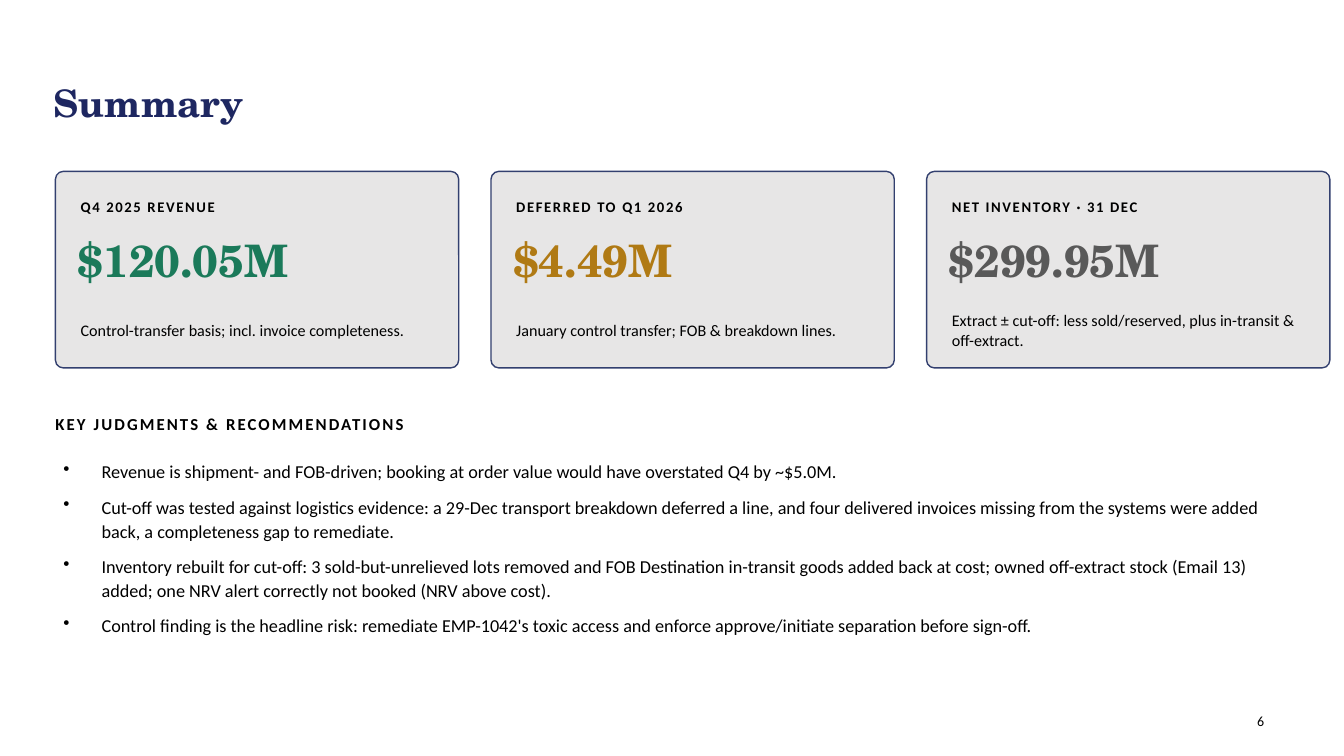
"""Build the summary slide: three headline figures and the key judgments."""
from dataclasses import dataclass

from lxml.etree import SubElement
from pptx import Presentation
from pptx.dml.color import RGBColor as Rgb
from pptx.enum.shapes import MSO_SHAPE as Preset
from pptx.enum.text import MSO_ANCHOR as Anchor, MSO_AUTO_SIZE as AutoSize, PP_ALIGN as Align
from pptx.oxml.ns import qn
from pptx.slide import Slide
from pptx.text.text import TextFrame, _Paragraph as Paragraph
from pptx.util import Emu, Pt

EMU_PER_PX = 9144


@dataclass(frozen=True)
class Style:
    """Font, size, colour, weight and letter spacing of a text."""
    font: str
    size: float
    color: str = "000000"
    bold: bool = False
    spacing: float = 0


@dataclass(frozen=True)
class Theme:
    """Colours and text styles of the slide."""
    card_fill: str = "E7E6E6"
    card_line: str = "33406F"
    revenue: str = "1B7A5A"
    deferred: str = "B07A14"
    inventory: str = "595959"
    title: Style = Style("TeX Gyre Schola", 27, "1E2761", True)
    label: Style = Style("Calibri", 10.5, bold=True, spacing=1.2)
    note: Style = Style("Calibri", 11.5)
    heading: Style = Style("Calibri", 12, bold=True, spacing=1.5)
    body: Style = Style("Calibri", 13)
    page: Style = Style("Calibri", 10)

    def figure(self, color: str) -> Style:
        """Return the headline figure style in the given colour."""
        return Style("TeX Gyre Schola", 32, color, True)


@dataclass(frozen=True)
class Box:
    """Position and size in px."""
    left: int
    top: int
    width: int
    height: int

    def emu(self) -> tuple[Emu, Emu, Emu, Emu]:
        """Return the box in EMU."""
        return px(self.left), px(self.top), px(self.width), px(self.height)


@dataclass(frozen=True)
class Card:
    """One headline figure with its label and note."""
    label: str
    figure: str
    color: str
    note: str


THEME = Theme()
CARDS = (
    Card("Q4 2025 REVENUE", "$120.05M", THEME.revenue,
         "Control-transfer basis; incl. invoice completeness."),
    Card("DEFERRED TO Q1 2026", "$4.49M", THEME.deferred,
         "January control transfer; FOB & breakdown lines."),
    Card("NET INVENTORY · 31 DEC", "$299.95M", THEME.inventory,
         "Extract ± cut-off: less sold/reserved, plus in-transit & off-extract."),
)
CARD_LEFT, CARD_TOP, CARD_WIDTH, CARD_HEIGHT, CARD_GAP = 55, 170, 400, 195, 32
JUDGMENTS = (
    "Revenue is shipment- and FOB-driven; booking at order value would have "
    "overstated Q4 by ~$5.0M.",
    "Cut-off was tested against logistics evidence: a 29-Dec transport breakdown deferred "
    "a line, and four delivered invoices missing from the systems were added back, "
    "a completeness gap to remediate.",
    "Inventory rebuilt for cut-off: 3 sold-but-unrelieved lots removed and FOB Destination "
    "in-transit goods added back at cost; owned off-extract stock (Email 13) added; "
    "one NRV alert correctly not booked (NRV above cost).",
    "Control finding is the headline risk: remediate EMP-1042's toxic access and enforce "
    "approve/initiate separation before sign-off.",
)
BULLET_INDENT = 38


def px(length: int) -> Emu:
    """Turn px into EMU."""
    return Emu(length * EMU_PER_PX)


def write(paragraph: Paragraph, text: str, style: Style) -> None:
    """Write a styled text into a paragraph."""
    run = paragraph.add_run()
    run.text = text
    if style.spacing:
        run._r.get_or_add_rPr().set("spc", str(round(style.spacing * 100)))
    paragraph.alignment = Align.LEFT
    font = paragraph.font
    font.name, font.size, font.bold = style.font, Pt(style.size), style.bold
    font.color.rgb = Rgb.from_string(style.color)


def set_frame(frame: TextFrame, anchor: Anchor = Anchor.MIDDLE, inset: bool = False) -> None:
    """Set wrapping, anchor and margins of a text frame."""
    frame.word_wrap = True
    frame.auto_size = AutoSize.NONE
    frame.vertical_anchor = anchor
    if not inset:
        frame.margin_left = frame.margin_top = frame.margin_right = frame.margin_bottom = 0


def add_text(slide: Slide, box: Box, text: str, style: Style) -> None:
    """Add a one-paragraph text box without margins."""
    frame = slide.shapes.add_textbox(*box.emu()).text_frame
    set_frame(frame)
    write(frame.paragraphs[0], text, style)


def add_title(slide: Slide, text: str) -> None:
    """Place and fill the title placeholder."""
    title = slide.shapes.title
    title.left, title.top, title.width, title.height = Box(53, 72, 1140, 60).emu()
    set_frame(title.text_frame)
    write(title.text_frame.paragraphs[0], text, THEME.title)


def add_card(slide: Slide, card: Card, left: int) -> None:
    """Draw a card with its label, figure and note."""
    panel = slide.shapes.add_shape(
        Preset.ROUNDED_RECTANGLE, *Box(left, CARD_TOP, CARD_WIDTH, CARD_HEIGHT).emu())
    panel.adjustments[0] = 0.04
    panel.shadow.inherit = False
    panel.fill.solid()
    panel.fill.fore_color.rgb = Rgb.from_string(THEME.card_fill)
    panel.line.color.rgb = Rgb.from_string(THEME.card_line)
    panel.line.width = Pt(1)
    add_text(slide, Box(left + 25, CARD_TOP + 20, 350, 30), card.label, THEME.label)
    add_text(slide, Box(left + 22, CARD_TOP + 50, 360, 75), card.figure,
             THEME.figure(card.color))
    add_text(slide, Box(left + 25, CARD_TOP + 130, 350, 55), card.note, THEME.note)


def add_judgments(slide: Slide) -> None:
    """Add the bulleted list of judgments."""
    frame = slide.shapes.add_textbox(*Box(53, 408, 1220, 270).emu()).text_frame
    set_frame(frame, inset=True)
    for index, judgment in enumerate(JUDGMENTS):
        paragraph = frame.add_paragraph() if index else frame.paragraphs[0]
        properties = paragraph._p.get_or_add_pPr()
        properties.set("marL", str(px(BULLET_INDENT)))
        properties.set("indent", str(-px(BULLET_INDENT)))
        SubElement(properties, qn("a:buChar"), char="•")
        paragraph.line_spacing = 1.1
        paragraph.space_after = Pt(8)
        write(paragraph, judgment, THEME.body)


def add_page_number(slide: Slide, number: str) -> None:
    """Add the page number at the lower right."""
    frame = slide.shapes.add_textbox(*Box(1237, 702, 33, 27).emu()).text_frame
    set_frame(frame, Anchor.TOP, inset=True)
    write(frame.paragraphs[0], number, THEME.page)


def main() -> None:
    """Build and save the slide."""
    deck = Presentation()
    deck.slide_width, deck.slide_height = px(1333), px(750)
    slide = deck.slides.add_slide(deck.slide_layouts[5])
    add_title(slide, "Summary")
    for column, card in enumerate(CARDS):
        add_card(slide, card, CARD_LEFT + column * (CARD_WIDTH + CARD_GAP))
    add_text(slide, Box(55, 405, 1200, 30), "KEY JUDGMENTS & RECOMMENDATIONS", THEME.heading)
    add_judgments(slide)
    add_page_number(slide, "6")
    deck.save("out.pptx")


if __name__ == "__main__":
    main()
